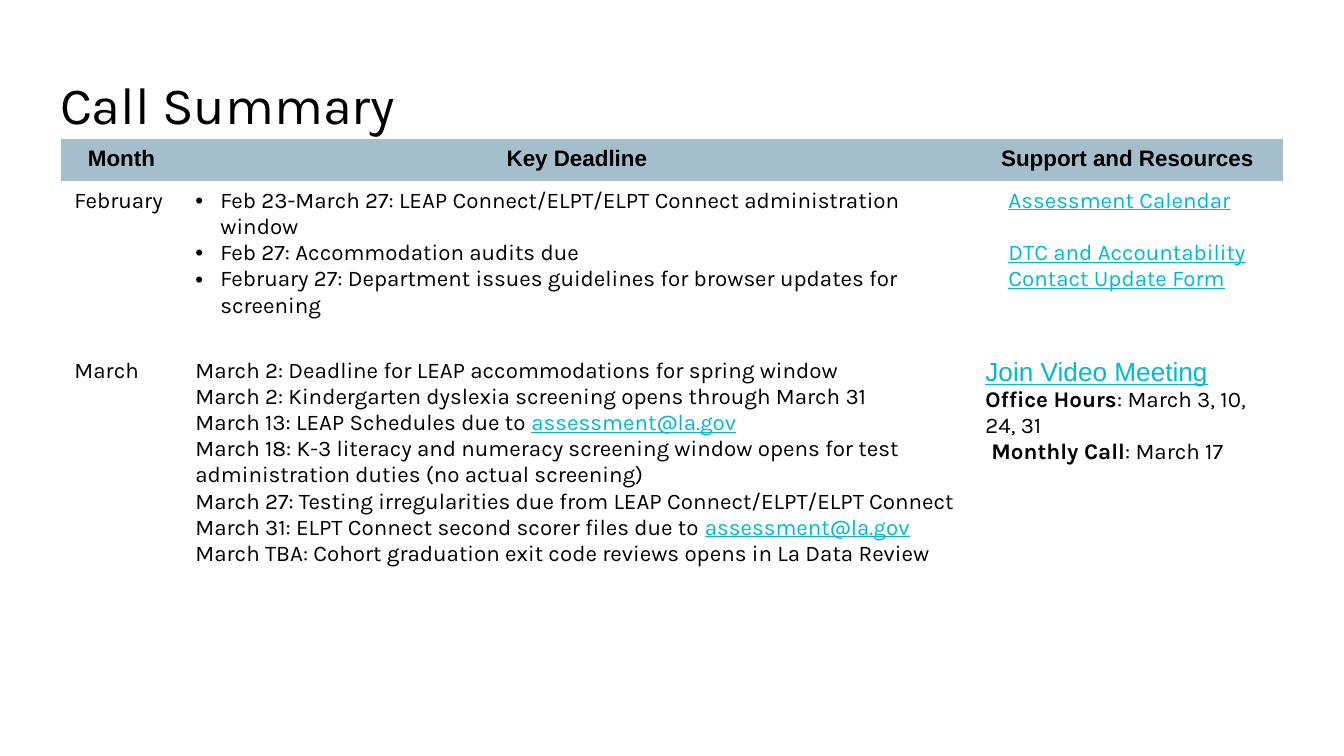
"""Build the call summary slide with its table of key deadlines."""
from dataclasses import dataclass

from lxml.etree import SubElement
from pptx import Presentation
from pptx.dml.color import RGBColor
from pptx.enum.text import MSO_ANCHOR as Anchor, MSO_AUTO_SIZE as AutoSize, PP_ALIGN as Align
from pptx.oxml.ns import qn
from pptx.util import Emu, Pt

PX_PER_INCH = 134.4
BLACK = RGBColor(0x00, 0x00, 0x00)
LINK = RGBColor(0x00, 0xBA, 0xD2)
HEADER = RGBColor(0xA4, 0xBE, 0xCC)
BODY_FONT = "Karla"
HEAD_FONT = "Arial"
PLAIN_STYLE = "{2D5ABB26-0587-4C30-8999-92F81FD0307C}"
COLUMNS = (121, 790, 311)
ROWS = (42, 170, 222)


@dataclass(frozen=True)
class Span:
    """A piece of text in one format."""
    text: str
    font: str = BODY_FONT
    size: int = 12
    bold: bool = False
    link: bool = False


@dataclass(frozen=True)
class Para:
    """A paragraph with its layout."""
    spans: tuple[Span, ...]
    align: Align = Align.LEFT
    indent: int = 0
    bullet: bool = False
    before: int = 0


@dataclass(frozen=True)
class Entry:
    """One month of the table."""
    month: str
    deadlines: tuple[Para, ...]
    resources: tuple[Para, ...]


def px(length: int) -> Emu:
    """Turn pixels into EMU."""
    return Emu(round(length * 914400 / PX_PER_INCH))


def line(text: str, *, align: Align = Align.LEFT, indent: int = 0,
         bullet: bool = False, before: int = 0, **style) -> Para:
    """Make a paragraph of a single span."""
    return Para((Span(text, **style),), align, indent, bullet, before)


def write(frame, paras: tuple[Para, ...]) -> None:
    """Fill a text frame with paragraphs."""
    for index, item in enumerate(paras):
        para = frame.paragraphs[0] if index == 0 else frame.add_paragraph()
        para.alignment = item.align
        para.space_before = Pt(item.before)
        properties = para._p.get_or_add_pPr()
        properties.set("marL", str(px(item.indent)))
        properties.set("indent", str(-px(item.indent) if item.bullet else 0))
        if item.bullet:
            color = SubElement(properties, qn("a:buClr"))
            SubElement(color, qn("a:srgbClr"), val=str(BLACK))
            SubElement(properties, qn("a:buFont"), typeface=HEAD_FONT)
            SubElement(properties, qn("a:buChar"), char="•")
        for span in item.spans:
            run = para.add_run()
            run.text = span.text
            run.font.name = span.font
            run.font.size = Pt(span.size)
            run.font.bold = span.bold
            run.font.underline = span.link
            run.font.color.rgb = LINK if span.link else BLACK


def add_title(page, text: str) -> None:
    """Place the slide title so that it clears the table."""
    box = page.shapes.title
    box.left, box.top, box.width, box.height = px(47), px(66), px(1253), px(85)
    frame = box.text_frame
    frame.auto_size = AutoSize.NONE
    frame.word_wrap = True
    frame.vertical_anchor = Anchor.TOP
    frame.margin_left = frame.margin_right = px(13)
    frame.margin_top, frame.margin_bottom = px(6), 0
    write(frame, (line(text, size=28),))


def add_table(page, headings: tuple[str, ...], entries: tuple[Entry, ...]) -> None:
    """Draw the deadline table without grid lines."""
    table = page.shapes.add_table(len(ROWS), len(COLUMNS), px(61), px(139),
                                  px(sum(COLUMNS)), px(sum(ROWS))).table
    table.first_row = table.horz_banding = False
    table._tbl.tblPr.find(qn("a:tableStyleId")).text = PLAIN_STYLE
    for column, width in zip(table.columns, COLUMNS):
        column.width = px(width)
    for row, height in zip(table.rows, ROWS):
        row.height = px(height)
    for cell, heading in zip(table.rows[0].cells, headings):
        cell.fill.solid()
        cell.fill.fore_color.rgb = HEADER
        write(cell.text_frame, (line(heading, align=Align.CENTER, font=HEAD_FONT, bold=True),))
    for number, entry in enumerate(entries, 1):
        contents = ((line(entry.month),), entry.deadlines, entry.resources)
        for cell, paras in zip(table.rows[number].cells, contents):
            cell.fill.background()
            write(cell.text_frame, paras)


EMAIL = Span("assessment@la.gov", link=True)
HEADINGS = ("Month", "Key Deadline", "Support and Resources")
FEBRUARY = Entry(
    "February",
    tuple(line(text, indent=25, bullet=True) for text in (
        "Feb 23-March 27: LEAP Connect/ELPT/ELPT Connect administration window",
        "Feb 27: Accommodation audits due",
        "February 27: Department issues guidelines for browser updates for screening",
    )),
    (
        line("Assessment Calendar", indent=23, link=True),
        line("DTC and Accountability Contact Update Form", indent=23, before=14, link=True),
    ),
)
MARCH = Entry(
    "March",
    (
        line("March 2: Deadline for LEAP accommodations for spring window"),
        line("March 2: Kindergarten dyslexia screening opens through March 31"),
        Para((Span("March 13: LEAP Schedules due to "), EMAIL)),
        line("March 18: K-3 literacy and numeracy screening window opens for test "
             "administration duties (no actual screening)"),
        line("March 27: Testing irregularities due from LEAP Connect/ELPT/ELPT Connect"),
        Para((Span("March 31: ELPT Connect second scorer files due to "), EMAIL)),
        line("March TBA: Cohort graduation exit code reviews opens in La Data Review"),
    ),
    (
        line("Join Video Meeting", font=HEAD_FONT, size=14, link=True),
        Para((Span("Office Hours", bold=True), Span(": March 3, 10, 24, 31"))),
        Para((Span("Monthly Call", bold=True), Span(": March 17")), indent=6),
    ),
)


def main() -> None:
    """Build and save the deck."""
    deck = Presentation()
    deck.slide_width, deck.slide_height = px(1344), px(756)
    page = deck.slides.add_slide(deck.slide_layouts[5])
    add_title(page, "Call Summary")
    add_table(page, HEADINGS, (FEBRUARY, MARCH))
    deck.save("out.pptx")


if __name__ == "__main__":
    main()
